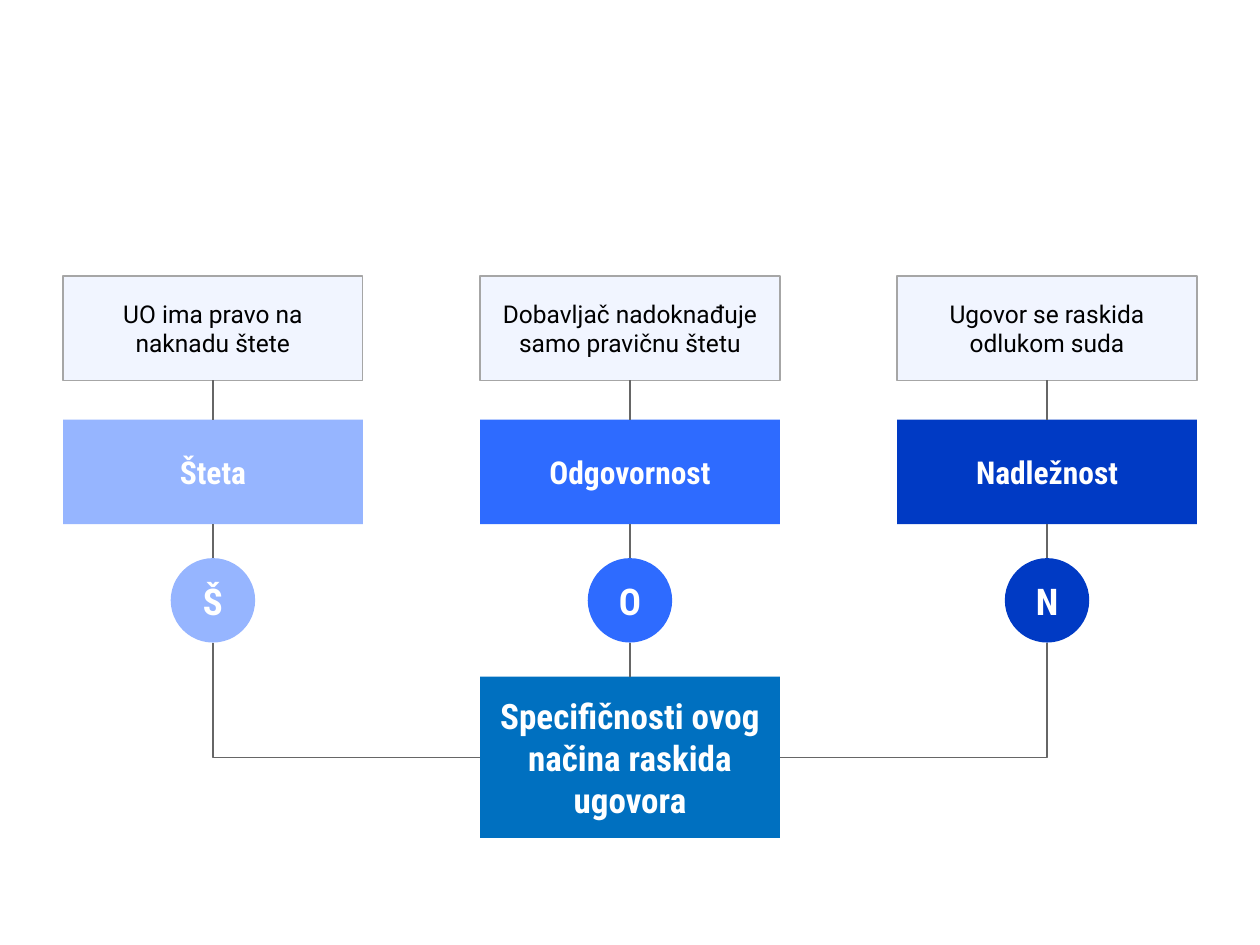
import pptx
import pptx.util
import pptx.dml.color
import pptx.enum.shapes
import pptx.enum.text
import pptx.oxml.ns
import pptx.oxml.xmlchemy

Inches = pptx.util.Inches
Pt = pptx.util.Pt
SHAPES = pptx.enum.shapes.MSO_SHAPE
CONNECTORS = pptx.enum.shapes.MSO_CONNECTOR

BOX_WIDTH, BOX_HEIGHT = Inches(2.38), Inches(0.83)
CIRCLE_SIZE = Inches(0.67)
COLUMN_LEFT, COLUMN_PITCH = Inches(0.5), Inches(3.31)
DESCRIPTION_TOP, TITLE_TOP, CIRCLE_TOP = Inches(2.19), Inches(3.33), Inches(4.43)
CIRCLE_BOTTOM = CIRCLE_TOP + CIRCLE_SIZE
ROOT_TOP, ROOT_HEIGHT = Inches(5.37), Inches(1.28)

DESCRIPTION_FONT = {"name": "Roboto", "size": Pt(14), "bold": False}
TITLE_FONT = {"name": "Roboto Condensed", "size": Pt(18), "bold": True}
LETTER_FONT = {**TITLE_FONT, "size": Pt(21)}
ROOT_FONT = {**TITLE_FONT, "size": Pt(20)}

COLUMNS = [
    ("UO ima pravo na naknadu štete", "Šteta", "Š", "96B5FF"),
    ("Dobavljač nadoknađuje samo pravičnu štetu", "Odgovornost", "O", "2E6BFF"),
    ("Ugovor se raskida odlukom suda", "Nadležnost", "N", "003AC4"),
]


def rgb(value):
    return pptx.dml.color.RGBColor.from_string(value)


def set_attributes(target, values):
    for name, value in values.items():
        setattr(target, name, value)


def add_node(slide, kind, box, text, fill, font, text_color="FFFFFF"):
    shape = slide.shapes.add_shape(kind, *box)
    shape.shadow.inherit = False
    shape.fill.solid()
    shape.fill.fore_color.rgb = rgb(fill)
    shape.line.fill.background()
    frame = shape.text_frame
    set_attributes(frame, {
        "word_wrap": True,
        "vertical_anchor": pptx.enum.text.MSO_ANCHOR.MIDDLE,
        "margin_left": Inches(0.1), "margin_right": Inches(0.1),
        "margin_top": Inches(0.1), "margin_bottom": Inches(0.1),
    })
    paragraph = frame.paragraphs[0]
    paragraph.alignment = pptx.enum.text.PP_ALIGN.CENTER
    run = paragraph.add_run()
    run.text = text
    set_attributes(run.font, font)
    run.font.color.rgb = rgb(text_color)
    return shape


def set_fill_opacity(shape, percent):
    fill = shape._element.spPr.find(pptx.oxml.ns.qn("a:solidFill"))
    alpha = pptx.oxml.xmlchemy.OxmlElement("a:alpha")
    alpha.set("val", str(percent * 1000))
    fill.find(pptx.oxml.ns.qn("a:srgbClr")).append(alpha)


def add_line(slide, start, end, kind=CONNECTORS.STRAIGHT):
    connector = slide.shapes.add_connector(kind, *start, *end)
    connector.line.color.rgb = rgb("666666")
    connector.line.width = Pt(0.75)
    connector._element.spPr.append(pptx.oxml.xmlchemy.OxmlElement("a:effectLst"))
    return connector


def add_corner_line(slide, start, end):
    """Elbow with one corner: sideways from start, then up to end."""
    connector = add_line(slide, start, end, CONNECTORS.ELBOW)
    geometry = connector._element.spPr.find(pptx.oxml.ns.qn("a:prstGeom"))
    geometry.set("prst", "bentConnector2")


def add_column(slide, left, description, title, letter, color):
    center = left + BOX_WIDTH // 2
    add_node(slide, SHAPES.RECTANGLE, (left, TITLE_TOP, BOX_WIDTH, BOX_HEIGHT),
             title, color, TITLE_FONT)
    add_node(slide, SHAPES.OVAL,
             (center - CIRCLE_SIZE // 2, CIRCLE_TOP, CIRCLE_SIZE, CIRCLE_SIZE),
             letter, color, LETTER_FONT)
    note = add_node(slide, SHAPES.RECTANGLE,
                    (left, DESCRIPTION_TOP, BOX_WIDTH, BOX_HEIGHT),
                    description, "96B5FF", DESCRIPTION_FONT, "000000")
    set_fill_opacity(note, 13)
    note.line.color.rgb = rgb("A6A6A6")
    note.line.width = Pt(0.75)
    for upper, lower in ((DESCRIPTION_TOP, TITLE_TOP), (TITLE_TOP, CIRCLE_TOP)):
        add_line(slide, (center, upper + BOX_HEIGHT), (center, lower))


def add_root(slide, left):
    """Root box with its lines to the three circles."""
    add_node(slide, SHAPES.RECTANGLE, (left, ROOT_TOP, BOX_WIDTH, ROOT_HEIGHT),
             "Specifičnosti ovog načina raskida ugovora", "0070C0", ROOT_FONT)
    center, middle = left + BOX_WIDTH // 2, ROOT_TOP + ROOT_HEIGHT // 2
    add_line(slide, (center, ROOT_TOP), (center, CIRCLE_BOTTOM))
    for side, direction in ((left, -1), (left + BOX_WIDTH, 1)):
        add_corner_line(slide, (side, middle),
                        (center + direction * COLUMN_PITCH, CIRCLE_BOTTOM))


def main():
    presentation = pptx.Presentation()
    presentation.slide_width, presentation.slide_height = Inches(10), Inches(7.5)
    slide = presentation.slides.add_slide(presentation.slide_layouts[6])
    add_root(slide, COLUMN_LEFT + COLUMN_PITCH)
    for index, column in enumerate(COLUMNS):
        add_column(slide, COLUMN_LEFT + index * COLUMN_PITCH, *column)
    presentation.save("out.pptx")


if __name__ == "__main__":
    main()
